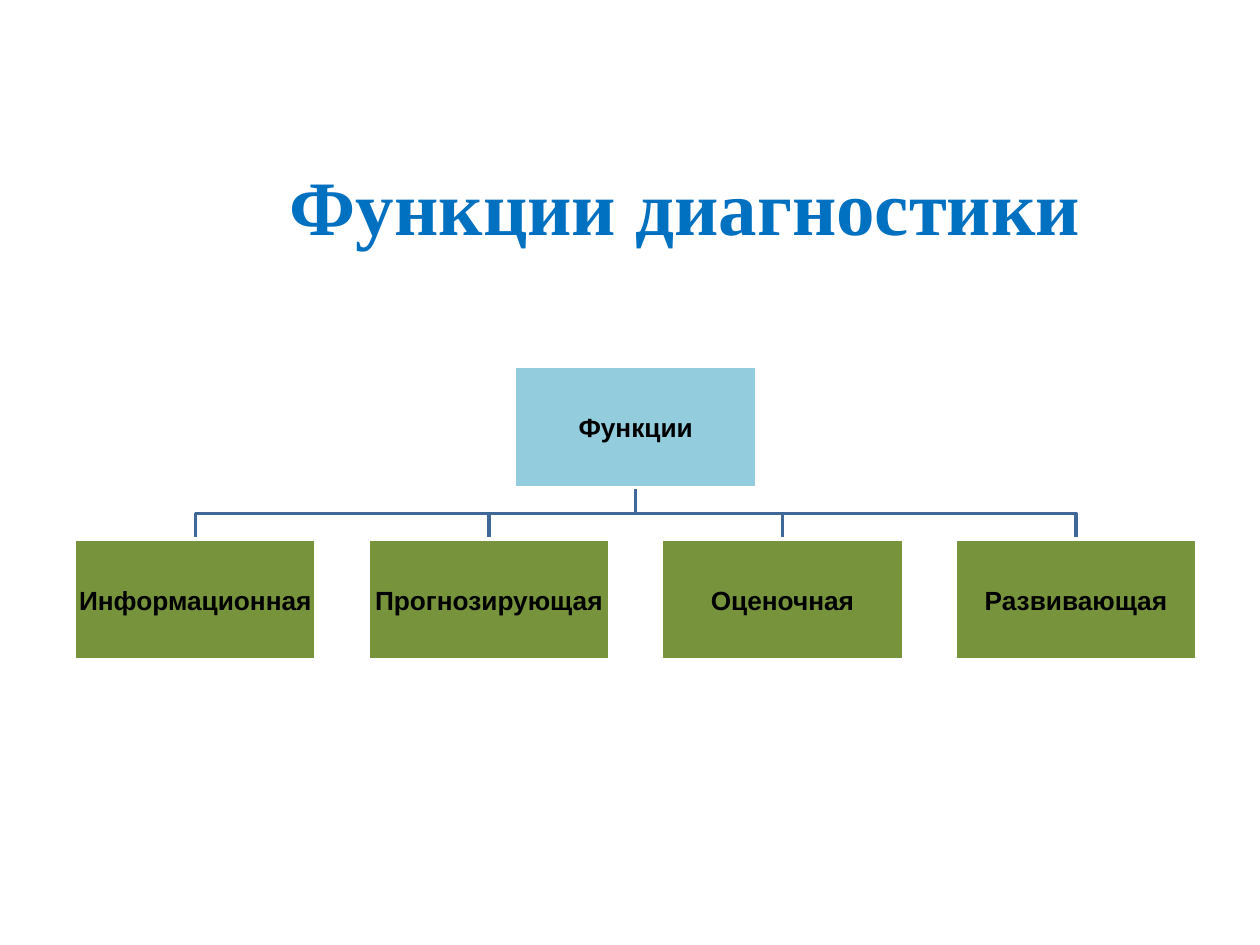
from pptx import Presentation
from pptx.dml.color import RGBColor as RGB
from pptx.enum.shapes import MSO_SHAPE as Shape
from pptx.enum.text import MSO_ANCHOR as Anchor, PP_ALIGN as Align
from pptx.util import Inches, Pt

COLORS = {
    "title": "0070C0",
    "root": "93CDDD",
    "leaf": "77933C",
    "link": "3F6797",
    "edge": "FFFFFF",
    "text": "000000",
}

# Chart grid, in inches
BOX_W, BOX_H = 1.92, 0.96
LEFT, STEP = 0.59, 2.33
ROOT_Y, LEAF_Y = 2.91, 4.28
LEAVES = ["Информационная", "Прогнозирующая", "Оценочная", "Развивающая"]


def color(name):
    return RGB.from_string(COLORS[name])


def write(frame, text, size=15, font="Arial", ink="text", inset=0.01):
    """Put one bold, centred line in a text frame."""
    frame.word_wrap = True
    frame.vertical_anchor = Anchor.MIDDLE
    frame.margin_left = frame.margin_right = Inches(inset)
    frame.margin_top = frame.margin_bottom = Inches(inset)
    par = frame.paragraphs[0]
    par.alignment = Align.CENTER
    run = par.add_run()
    run.text = text
    run.font.name = font
    run.font.size = Pt(size)
    run.font.bold = True
    run.font.color.rgb = color(ink)


class Canvas:
    def __init__(self, slide, width=2):
        self.shapes = slide.shapes
        self.width = Pt(width)

    def outline(self, shape, ink):
        shape.shadow.inherit = False
        shape.line.color.rgb = color(ink)
        shape.line.width = self.width

    def title(self, text, x, y, w, h):
        box = self.shapes.add_textbox(*map(Inches, (x, y, w, h)))
        write(box.text_frame, text, size=44, font="Times New Roman",
              ink="title", inset=0.05)

    def box(self, text, x, y, fill):
        box = self.shapes.add_shape(
            Shape.RECTANGLE, *map(Inches, (x, y, BOX_W, BOX_H)))
        box.fill.solid()
        box.fill.fore_color.rgb = color(fill)
        self.outline(box, "edge")
        write(box.text_frame, text)

    def link(self, x1, y1, x2, y2):
        mid = (y1 + y2) / 2
        path = self.shapes.build_freeform(Inches(x1), Inches(y1))
        turns = [(x1, mid), (x2, mid), (x2, y2)]
        path.add_line_segments(
            [(Inches(x), Inches(y)) for x, y in turns], close=False)
        line = path.convert_to_shape()
        line.fill.background()
        self.outline(line, "link")


def main():
    deck = Presentation()
    deck.slide_width, deck.slide_height = Inches(10), Inches(7.5)
    canvas = Canvas(deck.slides.add_slide(deck.slide_layouts[6]))

    canvas.title("Функции диагностики", 1.54, 0.76, 7.8, 1.73)

    # Links from the root to each leaf
    spots = [LEFT + i * STEP for i in range(len(LEAVES))]
    root_x = (spots[0] + spots[-1]) / 2
    half = BOX_W / 2
    for x in reversed(spots):
        canvas.link(root_x + half, ROOT_Y + BOX_H, x + half, LEAF_Y)

    # Root box and leaf row
    canvas.box("Функции", root_x, ROOT_Y, "root")
    for text, x in zip(LEAVES, spots):
        canvas.box(text, x, LEAF_Y, "leaf")

    deck.save("out.pptx")


if __name__ == "__main__":
    main()
